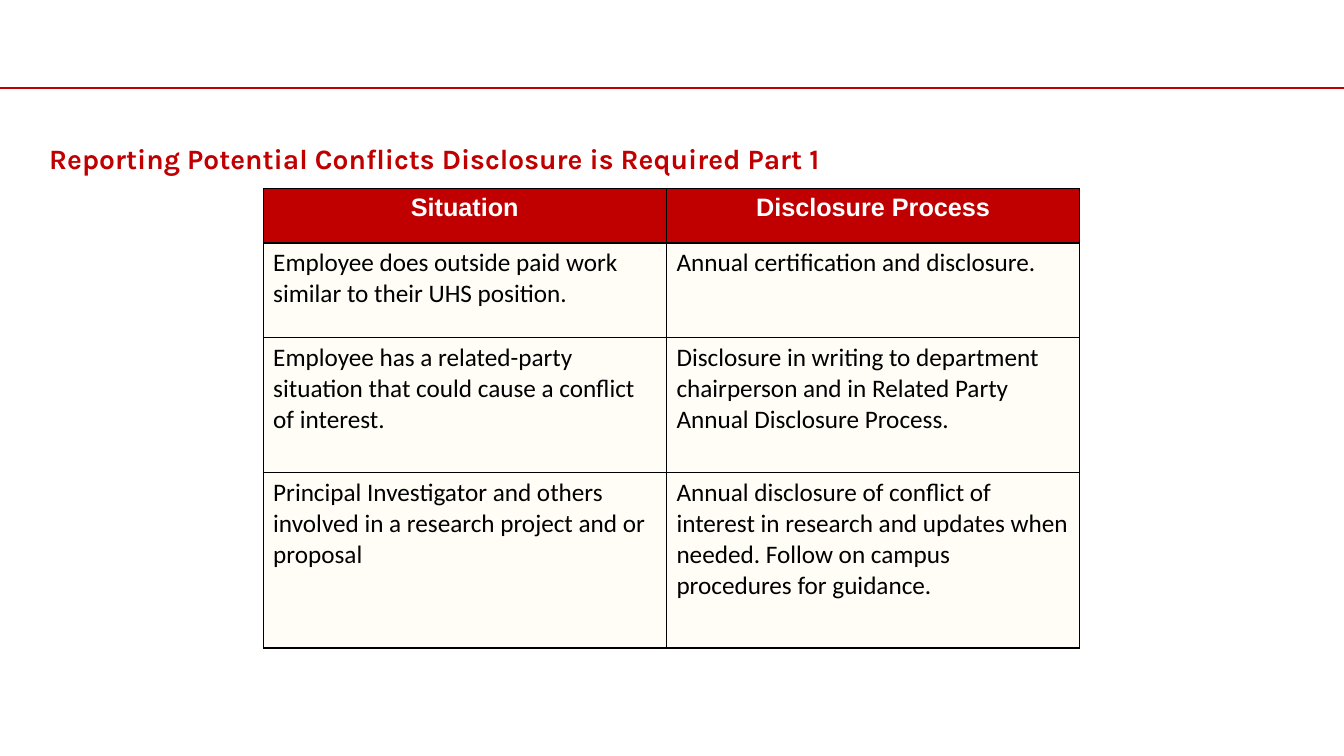
from dataclasses import dataclass

from lxml.etree import SubElement
from pptx import Presentation
from pptx.dml.color import RGBColor
from pptx.enum.shapes import MSO_CONNECTOR
from pptx.enum.text import MSO_ANCHOR, PP_ALIGN
from pptx.oxml.ns import qn
from pptx.util import Inches, Pt

TITLE = "Reporting Potential Conflicts Disclosure is Required Part 1"
HEADERS = ("Situation", "Disclosure Process")
SITUATIONS = [
    ("Employee does outside paid work similar to their UHS position.",
     "Annual certification and disclosure."),
    ("Employee has a related-party situation that could cause a conflict of interest.",
     "Disclosure in writing to department chairperson and in Related Party "
     "Annual Disclosure Process."),
    ("Principal Investigator and others involved in a research project and or proposal",
     "Annual disclosure of conflict of interest in research and updates when needed. "
     "Follow on campus procedures for guidance."),
]
COLUMN_WIDTHS = (4, 4.1)
ROW_HEIGHTS = (0.54, 0.94, 1.34, 1.74)


@dataclass(frozen=True)
class Theme:
    red: RGBColor = RGBColor(0xC0, 0x00, 0x00)
    cream: RGBColor = RGBColor(0xFF, 0xF9, 0xD9)
    cream_alpha: int = 22
    black: RGBColor = RGBColor(0x00, 0x00, 0x00)
    white: RGBColor = RGBColor(0xFF, 0xFF, 0xFF)
    title_font: str = "Karla"
    header_font: str = "Arial"
    body_font: str = "Calibri"
    title_size: int = 20
    table_size: int = 18
    rule_width: float = 1.5
    border_width: float = 1


THEME = Theme()


def add_text(paragraph, text, font_name, size, color, bold):
    run = paragraph.add_run()
    run.text = text
    run.font.name = font_name
    run.font.size = Pt(size)
    run.font.color.rgb = color
    run.font.bold = bold


def add_borders(cell):
    properties = cell._tc.get_or_add_tcPr()
    for index, side in enumerate(("a:lnL", "a:lnR", "a:lnT", "a:lnB")):
        border = SubElement(properties, qn(side), w=str(Pt(THEME.border_width)))
        fill = SubElement(border, qn("a:solidFill"))
        SubElement(fill, qn("a:srgbClr"), val=str(THEME.black))
        properties.insert(index, border)


def fill_cell(cell, color, alpha=None):
    cell.fill.solid()
    cell.fill.fore_color.rgb = color
    if alpha is not None:
        color_element = cell._tc.tcPr.find(qn("a:solidFill")).find(qn("a:srgbClr"))
        SubElement(color_element, qn("a:alpha"), val=str(alpha * 1000))


def add_rule(slide, slide_width):
    top = Inches(0.87)
    rule = slide.shapes.add_connector(MSO_CONNECTOR.STRAIGHT, 0, top, slide_width, top)
    rule.line.color.rgb = THEME.red
    rule.line.width = Pt(THEME.rule_width)
    SubElement(rule._element.spPr, qn("a:effectLst"))


def add_title(slide):
    box = slide.shapes.add_textbox(Inches(0.39), Inches(1.29), Inches(12.56), Inches(0.57))
    frame = box.text_frame
    frame.word_wrap = True
    frame.vertical_anchor = MSO_ANCHOR.MIDDLE
    add_text(frame.paragraphs[0], TITLE, THEME.title_font, THEME.title_size, THEME.red, True)


def add_situation_table(slide):
    rows = [HEADERS, *SITUATIONS]
    table = slide.shapes.add_table(
        len(rows), len(HEADERS), Inches(2.61), Inches(1.87),
        Inches(sum(COLUMN_WIDTHS)), Inches(sum(ROW_HEIGHTS))).table
    table.horz_banding = False
    for column, width in zip(table.columns, COLUMN_WIDTHS):
        column.width = Inches(width)
    for row, height in zip(table.rows, ROW_HEIGHTS):
        row.height = Inches(height)
    for row_index, texts in enumerate(rows):
        for column_index, text in enumerate(texts):
            cell = table.cell(row_index, column_index)
            paragraph = cell.text_frame.paragraphs[0]
            if row_index == 0:
                paragraph.alignment = PP_ALIGN.CENTER
                fill_cell(cell, THEME.red)
                add_text(paragraph, text, THEME.header_font, THEME.table_size, THEME.white, True)
            else:
                fill_cell(cell, THEME.cream, THEME.cream_alpha)
                add_text(paragraph, text, THEME.body_font, THEME.table_size, THEME.black, False)
            add_borders(cell)


def main():
    presentation = Presentation()
    presentation.slide_width = Inches(13.33)
    presentation.slide_height = Inches(7.5)
    slide = presentation.slides.add_slide(presentation.slide_layouts[6])
    add_rule(slide, presentation.slide_width)
    add_title(slide)
    add_situation_table(slide)
    presentation.save("out.pptx")


if __name__ == "__main__":
    main()
